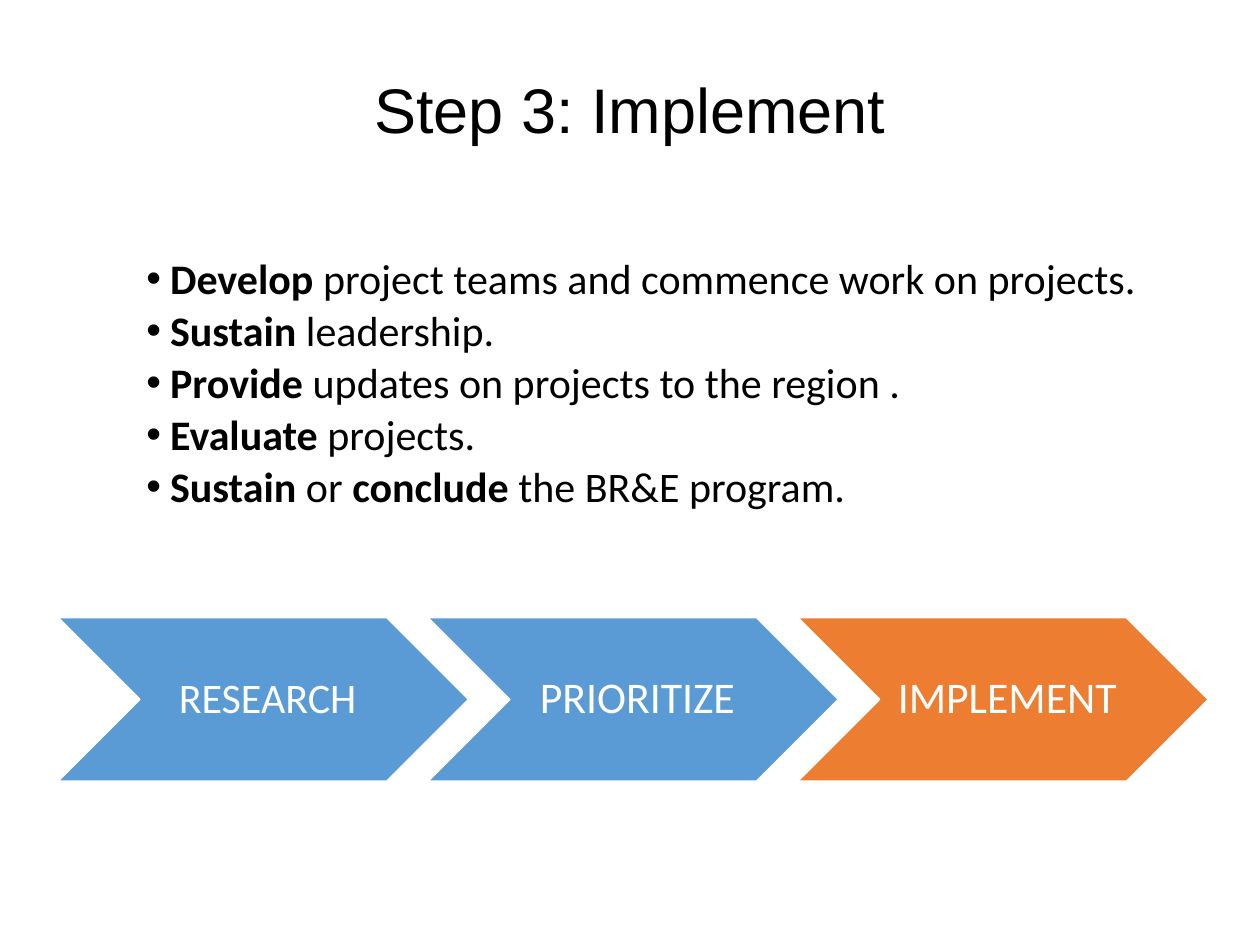
import pptx
import pptx.dml.color
import pptx.enum.shapes
import pptx.enum.text
import pptx.util
from lxml import etree
from pptx.oxml.ns import qn

Cm = pptx.util.Cm
Pt = pptx.util.Pt
ALIGN = pptx.enum.text.PP_ALIGN
ANCHOR = pptx.enum.text.MSO_ANCHOR

COLORS = {"text": "000000", "light": "FFFFFF", "step": "5B9BD5", "current": "ED7D31"}

# Each bullet is a list of (text, bold) runs.
BULLETS = [
    [("Develop", True), (" project teams and commence work on projects.", False)],
    [("Sustain", True), (" leadership.", False)],
    [("Provide", True), (" updates on projects to the region .", False)],
    [("Evaluate", True), (" projects.", False)],
    [("Sustain", True), (" or ", False), ("conclude", True), (" the BR&E program.", False)],
]

# Label, text size, fill colour
STEPS = [("RESEARCH", 24, "step"), ("PRIORITIZE", 25, "step"), ("IMPLEMENT", 25, "current")]


def rgb(name):
    return pptx.dml.color.RGBColor.from_string(COLORS[name])


def set_attributes(target, values):
    for name, value in values.items():
        setattr(target, name, value)


def add_run(paragraph, text, size, font, color, bold=False):
    run = paragraph.add_run()
    run.text = text
    set_attributes(run.font, {"name": font, "size": Pt(size), "bold": bold})
    run.font.color.rgb = rgb(color)


def add_text_frame(slide, left, top, width, height, anchor):
    frame = slide.shapes.add_textbox(Cm(left), Cm(top), Cm(width), Cm(height)).text_frame
    set_attributes(frame, {"word_wrap": True, "vertical_anchor": anchor})
    return frame


def add_title(slide, left, top, width, height):
    frame = add_text_frame(slide, left, top, width, height, ANCHOR.MIDDLE)
    paragraph = frame.paragraphs[0]
    set_attributes(paragraph, {"alignment": ALIGN.CENTER, "line_spacing": 0.9})
    add_run(paragraph, "Step 3: Implement", 36, "Arial", "text")


def add_bullet(paragraph, margin, indent):
    properties = paragraph._p.get_or_add_pPr()
    properties.set("marL", str(Cm(margin)))
    properties.set("indent", str(Cm(indent)))
    etree.SubElement(properties, qn("a:buFont")).set("typeface", "Arial")
    etree.SubElement(properties, qn("a:buChar")).set("char", "•")


def add_bullet_list(slide, left, top, width, height):
    frame = add_text_frame(slide, left, top, width, height, ANCHOR.TOP)
    for index, runs in enumerate(BULLETS):
        paragraph = frame.add_paragraph() if index else frame.paragraphs[0]
        add_bullet(paragraph, 1.43, -0.48)
        paragraph.line_spacing = 0.9
        if index:
            paragraph.space_before = Pt(3.8)
        for text, bold in runs:
            add_run(paragraph, text, 24, "Calibri", "text", bold)


def add_process(slide, left, top, width, height):
    """Spread overlapping chevrons evenly across the box."""
    chevron_width = 8.28
    pitch = (width - chevron_width) / (len(STEPS) - 1)
    for index, (label, size, fill) in enumerate(STEPS):
        chevron = slide.shapes.add_shape(
            pptx.enum.shapes.MSO_SHAPE.CHEVRON,
            Cm(left + index * pitch), Cm(top), Cm(chevron_width), Cm(height))
        chevron.shadow.inherit = False
        chevron.fill.solid()
        chevron.fill.fore_color.rgb = rgb(fill)
        chevron.line.color.rgb = rgb("light")
        chevron.line.width = Pt(1)
        set_attributes(chevron.text_frame, {
            "word_wrap": True, "vertical_anchor": ANCHOR.MIDDLE,
            "margin_left": Cm(0.27), "margin_right": Cm(0.1),
            "margin_top": Cm(0.1), "margin_bottom": Cm(0.1)})
        paragraph = chevron.text_frame.paragraphs[0]
        set_attributes(paragraph, {"alignment": ALIGN.CENTER, "line_spacing": 0.9})
        add_run(paragraph, label, size, "Calibri", "light")


def main():
    presentation = pptx.Presentation()
    set_attributes(presentation, {"slide_width": Cm(25.4), "slide_height": Cm(19.05)})
    slide = presentation.slides.add_slide(presentation.slide_layouts[6])
    add_title(slide, 1.75, 1.14, 21.9, 2.3)
    add_bullet_list(slide, 1.75, 5.08, 21.9, 12.1)
    add_process(slide, 1.17, 12.45, 23.19, 3.3)
    presentation.save("out.pptx")


if __name__ == "__main__":
    main()
